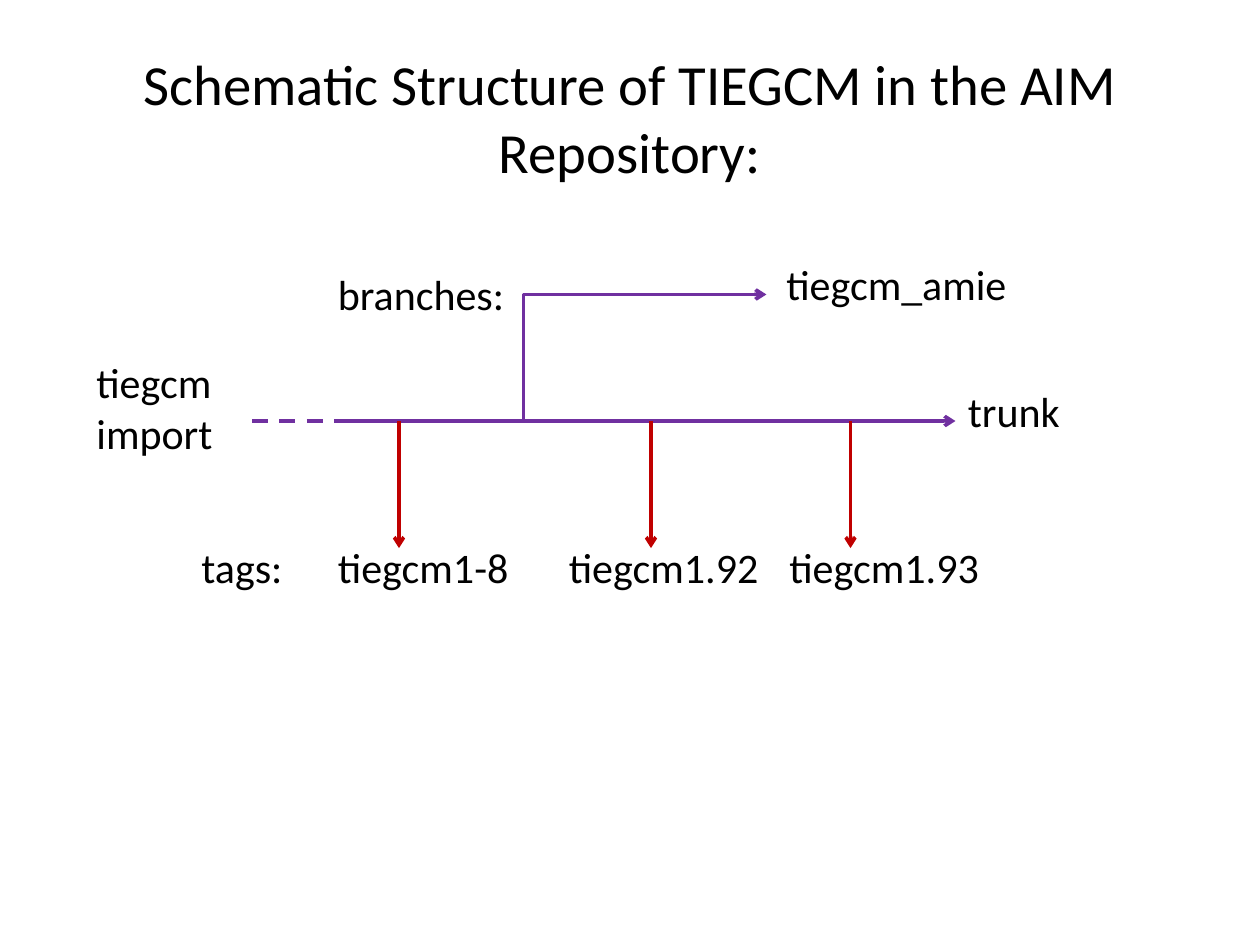
import pptx
import pptx.dml.color
import pptx.enum.dml
import pptx.enum.shapes
import pptx.enum.text
import pptx.oxml
import pptx.oxml.ns
import pptx.util

BLACK = pptx.dml.color.RGBColor(0x00, 0x00, 0x00)
PURPLE = pptx.dml.color.RGBColor(0x70, 0x30, 0xA0)
RED = pptx.dml.color.RGBColor(0xC0, 0x00, 0x00)
STRAIGHT = pptx.enum.shapes.MSO_CONNECTOR.STRAIGHT
ELBOW = pptx.enum.shapes.MSO_CONNECTOR.ELBOW
COLUMNS, ROWS = 120, 90
TRUNK_ROW, BRANCH_ROW, TAG_ROW = 40.1, 28.05, 52.2


def write_text(frame, text, size=24, font="Calibri", color=BLACK, align=None):
    frame.text = text
    for paragraph in frame.paragraphs:
        paragraph.alignment = align
        paragraph.font.size = pptx.util.Pt(size)
        paragraph.font.name = font
        paragraph.font.color.rgb = color


class Diagram:
    """Draws the repository diagram on a slide divided into columns and rows."""

    def __init__(self, presentation):
        self.column = presentation.slide_width / COLUMNS
        self.row = presentation.slide_height / ROWS
        self.slide = presentation.slides.add_slide(presentation.slide_layouts[5])

    def place(self, column, row):
        return round(column * self.column), round(row * self.row)

    def title(self, text, left, top, width, height):
        shape = self.slide.shapes.title
        shape.left, shape.top = self.place(left, top)
        shape.width, shape.height = self.place(width, height)
        shape.text_frame.vertical_anchor = pptx.enum.text.MSO_ANCHOR.MIDDLE
        write_text(shape.text_frame, text, size=32.4,
                   align=pptx.enum.text.PP_ALIGN.CENTER)

    def label(self, text, left, top, width, height=8.1):
        shape = self.slide.shapes.add_textbox(
            *self.place(left, top), *self.place(width, height))
        shape.text_frame.word_wrap = False
        write_text(shape.text_frame, text)

    def line(self, start, end, color=PURPLE, width=2, kind=STRAIGHT,
             arrow=True, dash=None, bend=None):
        connector = self.slide.shapes.add_connector(
            kind, *self.place(*start), *self.place(*end))
        connector.line.color.rgb = color
        connector.line.width = pptx.util.Pt(width)
        connector.line.dash_style = dash
        properties = connector._element.spPr
        if arrow:
            tail = pptx.oxml.parse_xml(
                f'<a:tailEnd {pptx.oxml.ns.nsdecls("a")} type="arrow"/>')
            connector.line._get_or_add_ln().append(tail)
        if bend is not None:
            guide = pptx.oxml.parse_xml(
                f'<a:gd {pptx.oxml.ns.nsdecls("a")} name="adj1" fmla="val {bend}"/>')
            properties.find(".//" + pptx.oxml.ns.qn("a:avLst")).append(guide)
        properties.append(pptx.oxml.parse_xml(
            f'<a:effectLst {pptx.oxml.ns.nsdecls("a")}/>'))


def main():
    presentation = pptx.Presentation()
    presentation.slide_width = pptx.util.Inches(10)
    presentation.slide_height = pptx.util.Inches(7.5)
    diagram = Diagram(presentation)
    diagram.title("Schematic Structure of TIEGCM in the AIM Repository:",
                  6, 3.6, 108, 15)

    diagram.line((33, TRUNK_ROW), (91, TRUNK_ROW))
    diagram.line((24, TRUNK_ROW), (34, TRUNK_ROW), width=2.25, arrow=False,
                 dash=pptx.enum.dml.MSO_LINE.DASH)
    diagram.label("tiegcm\nimport", 8, 33.4, 13.6, 10.9)
    diagram.label("trunk", 91, 36.1, 11.3)

    diagram.line((50, TRUNK_ROW), (73, BRANCH_ROW), kind=ELBOW, bend=-600)
    diagram.label("branches:", 31, 25, 18.5, 6)
    diagram.label("tiegcm_amie", 73.7, 24, 23.7, 6)

    diagram.label("tags:", 18, 51, 10.2, 6)
    for text, arrow_column, left, width in (
            ("tiegcm1-8", 38, 31, 18.8),
            ("tiegcm1.92", 62, 53, 20.6),
            ("tiegcm1.93", 81, 74, 20.6)):
        diagram.line((arrow_column, TRUNK_ROW), (arrow_column, TAG_ROW), color=RED)
        diagram.label(text, left, 51, width)

    presentation.save("out.pptx")


if __name__ == "__main__":
    main()
